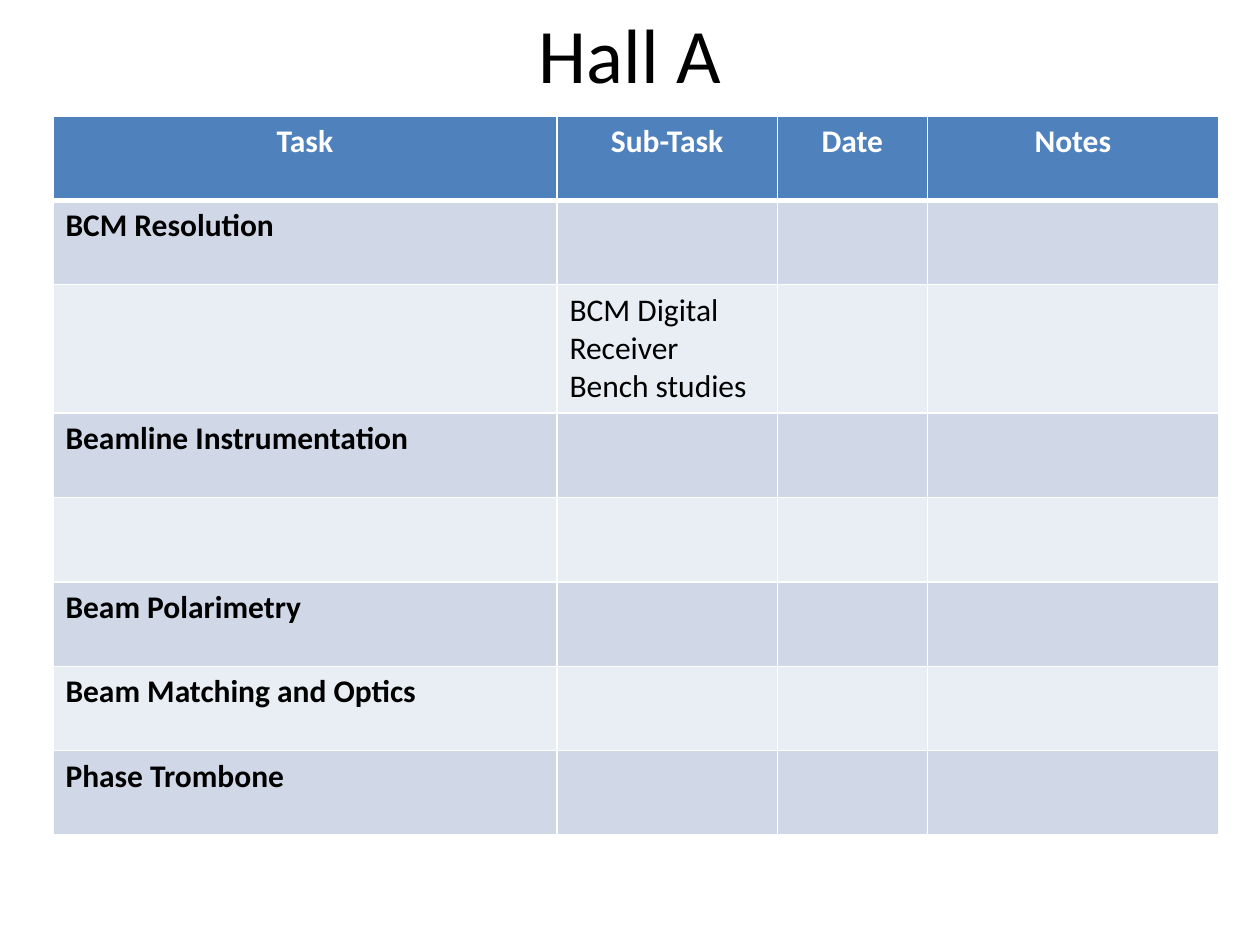
from dataclasses import dataclass

from lxml import etree
from pptx import Presentation
from pptx.dml.color import RGBColor
from pptx.enum.text import MSO_ANCHOR, PP_ALIGN
from pptx.oxml.ns import qn
from pptx.table import _Cell
from pptx.text.text import _Paragraph
from pptx.util import Inches, Pt

CENTER, LEFT = PP_ALIGN.CENTER, PP_ALIGN.LEFT
MIDDLE = MSO_ANCHOR.MIDDLE

WHITE = RGBColor(0xFF, 0xFF, 0xFF)
BLACK = RGBColor(0x00, 0x00, 0x00)
HEADER_BLUE = RGBColor(0x4F, 0x81, 0xBD)
BAND_DARK = RGBColor(0xD0, 0xD8, 0xE8)
BAND_LIGHT = RGBColor(0xE9, 0xED, 0xF4)

TITLE_FONT = {"name": "Calibri", "size": Pt(44), "bold": False}
CELL_FONT = {"name": "Calibri", "size": Pt(18)}

COLUMN_WIDTHS = (4, 1.75, 1.19, 2.31)
ROW_HEIGHT = 0.67
TALL_ROW_HEIGHT = 1.02
HEADINGS = ("Task", "Sub-Task", "Date", "Notes")


@dataclass
class TaskRow:
    task: str = ""
    sub_task: str = ""
    height: float = ROW_HEIGHT


TASK_ROWS = (
    TaskRow("BCM Resolution"),
    TaskRow(sub_task="BCM Digital Receiver Bench studies", height=TALL_ROW_HEIGHT),
    TaskRow("Beamline Instrumentation"),
    TaskRow(),
    TaskRow("Beam Polarimetry"),
    TaskRow("Beam Matching and Optics"),
    TaskRow("Phase Trombone"),
)


def write_text(paragraph: _Paragraph, text: str, font_format: dict,
               color: RGBColor, alignment: PP_ALIGN) -> None:
    paragraph.alignment = alignment
    run = paragraph.add_run()
    run.text = text
    for name, value in font_format.items():
        setattr(run.font, name, value)
    run.font.color.rgb = color


def set_borders(cell: _Cell, top: float = 1, bottom: float = 1) -> None:
    """Draw white cell borders; widths are in points."""
    properties = cell._tc.get_or_add_tcPr()
    widths = {"a:lnL": 1, "a:lnR": 1, "a:lnT": top, "a:lnB": bottom}
    for position, (tag, width) in enumerate(widths.items()):
        line = etree.Element(qn(tag), w=str(Pt(width)))
        fill = etree.SubElement(line, qn("a:solidFill"))
        etree.SubElement(fill, qn("a:srgbClr"), val=str(WHITE))
        properties.insert(position, line)


def fill_cell(cell: _Cell, text: str, fill: RGBColor, color: RGBColor,
              bold: bool, alignment: PP_ALIGN) -> None:
    cell.fill.solid()
    cell.fill.fore_color.rgb = fill
    paragraph = cell.text_frame.paragraphs[0]
    if text:
        write_text(paragraph, text, {**CELL_FONT, "bold": bold}, color, alignment)
    else:
        paragraph.font.size = CELL_FONT["size"]


def add_title(slide) -> None:
    title = slide.shapes.title
    title.left, title.top = Inches(0.5), Inches(0)
    title.width, title.height = Inches(9), Inches(0.83)
    title.text_frame.vertical_anchor = MIDDLE
    write_text(title.text_frame.paragraphs[0], "Hall A", TITLE_FONT, BLACK, CENTER)


def add_task_table(slide) -> None:
    heights = [ROW_HEIGHT] + [row.height for row in TASK_ROWS]
    table = slide.shapes.add_table(
        len(heights), len(COLUMN_WIDTHS), Inches(0.42), Inches(0.92),
        Inches(sum(COLUMN_WIDTHS)), Inches(sum(heights))).table
    for column, width in zip(table.columns, COLUMN_WIDTHS):
        column.width = Inches(width)
    for row, height in zip(table.rows, heights):
        row.height = Inches(height)

    for cell, heading in zip(table.rows[0].cells, HEADINGS):
        fill_cell(cell, heading, HEADER_BLUE, WHITE, True, CENTER)
        set_borders(cell, bottom=3)

    for number, task_row in enumerate(TASK_ROWS, start=1):
        band = BAND_DARK if number % 2 else BAND_LIGHT
        texts = (task_row.task, task_row.sub_task, "", "")
        for column, text in enumerate(texts):
            cell = table.cell(number, column)
            fill_cell(cell, text, band, BLACK, column == 0, LEFT)
            set_borders(cell, top=3 if number == 1 else 1)


def main() -> None:
    presentation = Presentation()
    presentation.slide_width, presentation.slide_height = Inches(10), Inches(7.5)
    title_only = presentation.slide_layouts[5]
    slide = presentation.slides.add_slide(title_only)
    add_title(slide)
    add_task_table(slide)
    presentation.save("out.pptx")


if __name__ == "__main__":
    main()
